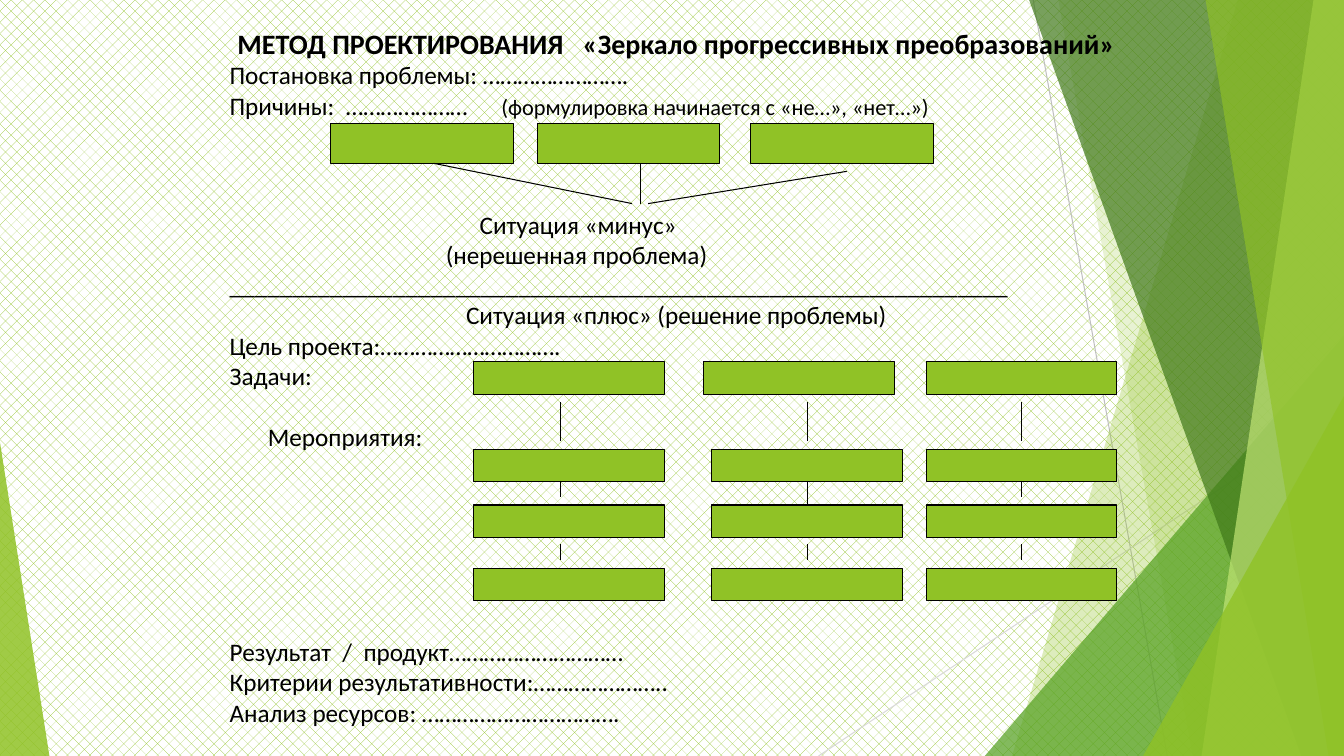
import pptx
import pptx.util
import pptx.dml.color
import pptx.enum.dml
import pptx.enum.shapes
import pptx.enum.text
import pptx.oxml.ns
from lxml import etree

# Grid: one column or row is a tenth of an inch
COLS, ROWS = 133.33, 75
GREEN, BLACK = "90C226", "000000"
SHAPES = pptx.enum.shapes.MSO_SHAPE
ALIGN = pptx.enum.text.PP_ALIGN
LINE_HEIGHT = 22  # points, one line of 18 pt text

# Decor: corner points, colour, opacity in percent
FACETS = [
    ([(122.8, 0), (COLS, 0), (COLS, ROWS), (100.4, ROWS)], GREEN, 30),
    ([(105, 0), (COLS, 0), (COLS, ROWS), (118.3, ROWS)], GREEN, 20),
    ([(97.7, ROWS), (COLS, 33.3), (COLS, ROWS)], "54A021", 72),
    ([(102.1, 0), (COLS, 0), (COLS, ROWS), (129.1, ROWS)], "3F7819", 70),
    ([(130.3, 0), (COLS, 0), (COLS, ROWS), (119.2, ROWS)], "C0E474", 70),
    ([(119.6, 0), (COLS, 0), (COLS, ROWS), (131.8, ROWS)], GREEN, 65),
    ([(113.4, ROWS), (COLS, 39.3), (COLS, ROWS)], GREEN, 80),
    ([(0, 43.9), (4.9, ROWS), (0, ROWS)], GREEN, 85),
]

# Text: parts (a number is a space widened by that many points), options
PARAGRAPHS = [
    (["МЕТОД ПРОЕКТИРОВАНИЯ", 9, "«Зеркало прогрессивных преобразований»"],
     dict(size=20, bold=True, align=ALIGN.CENTER)),
    (["Постановка проблемы: ……………………."], {}),
    (["Причины:", 4, "…………………", 20,
      ("(формулировка начинается с «не…», «нет…»)", 16)], {}),
    (["Ситуация «минус»"], dict(before=63.5, indent=24.8)),
    (["(нерешенная проблема)"], dict(indent=21.45)),
    (["_" * 62], {}),
    (["Ситуация «плюс» (решение проблемы)"], dict(align=ALIGN.CENTER)),
    (["Цель проекта:…………………………."], {}),
    (["Задачи:"], {}),
    (["Мероприятия:"], dict(before=LINE_HEIGHT, indent=3.8)),
    (["Результат", 4, "/", 4, "продукт…………………………"], dict(before=6 * LINE_HEIGHT)),
    (["Критерии результативности:………………….."], {}),
    (["Анализ ресурсов: ……………………………."], {}),
]


def grid(units):
    return pptx.util.Inches(units / 10)


def color(hex_string):
    return pptx.dml.color.RGBColor.from_string(hex_string)


def add_facet(slide, corners, fill, opacity):
    points = [(grid(x), grid(y)) for x, y in corners]
    builder = slide.shapes.build_freeform(*points[0])
    builder.add_line_segments(points[1:], close=True)
    facet = builder.convert_to_shape()
    facet.shadow.inherit = False
    facet.line.fill.background()
    facet.fill.solid()
    facet.fill.fore_color.rgb = color(fill)
    tint = facet.fill._xPr.find(".//" + pptx.oxml.ns.qn("a:srgbClr"))
    etree.SubElement(tint, pptx.oxml.ns.qn("a:alpha"), val=str(opacity * 1000))


def add_line(slide, start, end, stroke=BLACK):
    line = slide.shapes.add_connector(
        pptx.enum.shapes.MSO_CONNECTOR.STRAIGHT, *map(grid, start + end))
    line.line.color.rgb = color(stroke)
    line.line.width = pptx.util.Pt(0.75)
    etree.SubElement(line._element.spPr, pptx.oxml.ns.qn("a:effectLst"))


def add_box(slide, left, top, width, height):
    box = slide.shapes.add_shape(SHAPES.RECTANGLE, *map(grid, (left, top, width, height)))
    box.shadow.inherit = False
    box.fill.solid()
    box.fill.fore_color.rgb = color(GREEN)
    box.line.color.rgb = color(BLACK)
    box.line.width = pptx.util.Pt(0.75)


def fill_paragraph(paragraph, parts, size=18, bold=False, align=ALIGN.LEFT,
                   before=0, indent=0):
    paragraph.alignment = align
    paragraph.space_before = pptx.util.Pt(before)
    paragraph._p.get_or_add_pPr().set("marL", str(grid(indent)))
    paragraph.font.name = "Calibri"
    paragraph.font.size = pptx.util.Pt(size)
    paragraph.font.bold = bold
    paragraph.font.color.rgb = color(BLACK)
    for part in parts:
        run = paragraph.add_run()
        if isinstance(part, int):
            run.text = " "
            run._r.get_or_add_rPr().set("spc", str(part * 100))
        elif isinstance(part, tuple):
            run.text = part[0]
            run.font.size = pptx.util.Pt(part[1])
        else:
            run.text = part


def add_outline(slide):
    frame = slide.shapes.add_textbox(*map(grid, (21.8, 2.1, 90.6, 70.7))).text_frame
    frame.word_wrap = True
    for number, (parts, options) in enumerate(PARAGRAPHS):
        paragraph = frame.add_paragraph() if number else frame.paragraphs[0]
        fill_paragraph(paragraph, parts, **options)


def add_causes(slide):
    for left in (32.8, 53.3, 74.5):
        add_box(slide, left, 12.3, 18.1, 3.9)
    for start, end_col in (((43, 16.2), 62.7), ((84, 17), 64.3), ((63.5, 16.2), 63.5)):
        add_line(slide, start, (end_col, 20.2))


def add_tasks(slide):
    # Task column, activity column, link column, end of the second link
    for task, activity, link, link_end in ((47, 47, 55.6, 49.3),
                                           (69.8, 70.6, 80.1, 50.1),
                                           (91.9, 91.9, 101.3, 49.3)):
        add_box(slide, task, 35.9, 18.9, 3.2)
        for row in (44.6, 50.1, 56.4):
            add_box(slide, activity, row, 18.9, 3.2)
        for top, bottom in ((39.9, 43.8), (47.7, link_end), (54, 55.6)):
            add_line(slide, (link, top), (link, bottom))


def main():
    deck = pptx.Presentation()
    deck.slide_width, deck.slide_height = grid(COLS), grid(ROWS)
    slide = deck.slides.add_slide(deck.slide_layouts[6])

    # Patterned background
    backdrop = slide.background.fill
    backdrop.patterned()
    backdrop.pattern = pptx.enum.dml.MSO_PATTERN.PERCENT_25
    backdrop.fore_color.rgb = color(GREEN)
    backdrop.back_color.rgb = color("FFFFFF")

    # Side decor
    add_line(slide, (102.5, 0), (115.8, ROWS), "BFBFBF")
    add_line(slide, (COLS, 40.3), (81.2, ROWS), "D9D9D9")
    for facet in FACETS:
        add_facet(slide, *facet)

    # Project scheme
    add_outline(slide)
    add_causes(slide)
    add_tasks(slide)
    deck.save("out.pptx")


if __name__ == "__main__":
    main()
